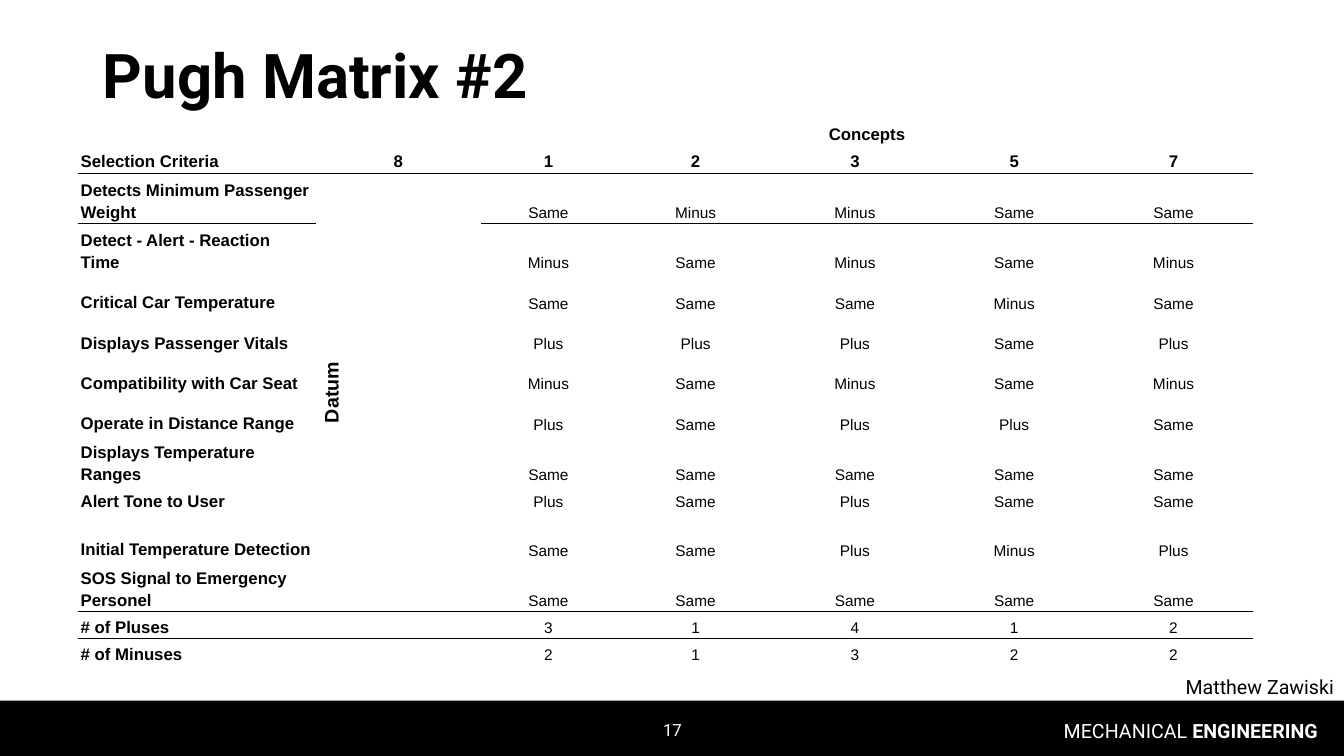
from dataclasses import dataclass

from lxml.etree import SubElement
from pptx import Presentation
from pptx.dml.color import RGBColor
from pptx.enum.shapes import MSO_SHAPE
from pptx.enum.text import MSO_ANCHOR, PP_ALIGN
from pptx.oxml import parse_xml
from pptx.oxml.ns import nsdecls, qn
from pptx.util import Inches, Pt

COLORS = {"ink": "000000", "paper": "FFFFFF"}
NO_STYLE = "{2D5ABB26-0587-4C30-8999-92F81FD0307C}"
COL_WIDTHS = [2.36, 1.64, 1.34] + [1.58] * 4
ROW_HEIGHTS = [0.27, 0.26, 0.48, 0.48, 0.4, 0.4, 0.4, 0.4, 0.48, 0.26, 0.48, 0.48, 0.27, 0.27]
RULED_ROWS = (1, 2, 11, 12)
DATUM_ROW, LAST_CRITERION_ROW, DATUM_COL = 2, 11, 1


@dataclass
class Criterion:
    name: str
    ratings: str


@dataclass
class Label:
    words: list[str]
    box: tuple[float, float, float, float]
    size: int
    color: str
    align: PP_ALIGN
    anchor: MSO_ANCHOR = MSO_ANCHOR.TOP
    spacing: float = 1.0


CRITERIA = [
    Criterion("Detects Minimum Passenger Weight", "Same Minus Minus Same Same"),
    Criterion("Detect - Alert - Reaction Time", "Minus Same Minus Same Minus"),
    Criterion("Critical Car Temperature", "Same Same Same Minus Same"),
    Criterion("Displays Passenger Vitals", "Plus Plus Plus Same Plus"),
    Criterion("Compatibility with Car Seat", "Minus Same Minus Same Minus"),
    Criterion("Operate in Distance Range", "Plus Same Plus Plus Same"),
    Criterion("Displays Temperature Ranges", "Same Same Same Same Same"),
    Criterion("Alert Tone to User", "Plus Same Plus Same Same"),
    Criterion("Initial Temperature Detection", "Same Same Plus Minus Plus"),
    Criterion("SOS Signal to Emergency Personel", "Same Same Same Same Same"),
    Criterion("# of Pluses", "3 1 4 1 2"),
    Criterion("# of Minuses", "2 1 3 2 2"),
]
LABELS = [
    Label(["MECHANICAL ", "ENGINEERING"], (10.17, 7.08, 3, 0.4), 14, "paper", PP_ALIGN.RIGHT),
    Label(["17"], (5.17, 7.04, 3, 0.4), 12, "paper", PP_ALIGN.CENTER, MSO_ANCHOR.MIDDLE),
    Label(["Matthew Zawiski"], (9.83, 6.67, 3.5, 0.25), 14, "ink", PP_ALIGN.RIGHT, spacing=0.9),
]


def rgb(name: str) -> RGBColor:
    return RGBColor.from_string(COLORS[name])


def style_run(r, font: str, size: int, color: str, bold: bool) -> None:
    r.font.name = font
    r.font.size = Pt(size)
    r.font.bold = bold
    r.font.color.rgb = rgb(color)


def add_title(s, text: str) -> None:
    sp = s.shapes.title
    sp.left, sp.top, sp.width, sp.height = map(Inches, (0.92, 0.05, 11.5, 1.45))
    tf = sp.text_frame
    tf.text = text
    tf.vertical_anchor = MSO_ANCHOR.MIDDLE
    p = tf.paragraphs[0]
    p.alignment = PP_ALIGN.LEFT
    p.line_spacing = 0.9
    style_run(p.runs[0], "Roboto", 44, "ink", True)


def add_footer_bar(s) -> None:
    sp = s.shapes.add_shape(MSO_SHAPE.RECTANGLE, 0, Inches(6.95), Inches(13.33), Inches(0.55))
    sp.shadow.inherit = False
    sp.fill.solid()
    sp.fill.fore_color.rgb = rgb("ink")
    sp.line.fill.background()


def add_label(s, label: Label) -> None:
    tf = s.shapes.add_textbox(*map(Inches, label.box)).text_frame
    tf.word_wrap = True
    tf.vertical_anchor = label.anchor
    p = tf.paragraphs[0]
    p.alignment = label.align
    p.line_spacing = label.spacing
    for i, word in enumerate(label.words):
        r = p.add_run()
        r.text = word
        style_run(r, "Roboto", label.size, label.color, i > 0)


def add_bottom_rule(cell) -> None:
    cell._tc.get_or_add_tcPr().insert(0, parse_xml(
        f'<a:lnB {nsdecls("a")} w="9525"><a:solidFill>'
        f'<a:srgbClr val="{COLORS["ink"]}"/></a:solidFill></a:lnB>'))


def fill_cell(cell, text: str, size: int, bold: bool, align: PP_ALIGN) -> None:
    cell.fill.background()
    cell.vertical_anchor = MSO_ANCHOR.BOTTOM
    cell.margin_left = cell.margin_right = Inches(0.03)
    cell.margin_top = cell.margin_bottom = Inches(0.02)
    tf = cell.text_frame
    tf.text = text
    p = tf.paragraphs[0]
    p.alignment = align
    p.line_spacing = 1.15
    for r in p.runs:
        style_run(r, "Arial", size, "ink", bold)
    if not text:
        SubElement(p._p, qn("a:endParaRPr"), sz=str(size * 100))


def add_matrix(s) -> None:
    rows = [["", "", "Concepts", "", "", "", ""],
            ["Selection Criteria", "8", "1", "2", "3", "5", "7"]]
    rows += [[c.name, "", *c.ratings.split()] for c in CRITERIA]
    rows[DATUM_ROW][DATUM_COL] = "Datum"
    table = s.shapes.add_table(len(rows), len(COL_WIDTHS), Inches(0.77), Inches(1.18),
                               Inches(sum(COL_WIDTHS)), Inches(sum(ROW_HEIGHTS))).table
    table.first_row = table.horz_banding = False
    table._tbl.tblPr.find(qn("a:tableStyleId")).text = NO_STYLE
    for col, width in zip(table.columns, COL_WIDTHS):
        col.width = Inches(width)
    for i, texts in enumerate(rows):
        table.rows[i].height = Inches(ROW_HEIGHTS[i])
        for j, text in enumerate(texts):
            cell = table.cell(i, j)
            bold = i < 2 or j < 2
            size = 14 if text == "Datum" else 12 if bold else 11
            fill_cell(cell, text, size, bold, PP_ALIGN.CENTER if j else PP_ALIGN.LEFT)
            if i in RULED_ROWS:
                add_bottom_rule(cell)
    table.cell(0, 2).merge(table.cell(0, len(COL_WIDTHS) - 1))
    datum = table.cell(DATUM_ROW, DATUM_COL)
    datum.merge(table.cell(LAST_CRITERION_ROW, DATUM_COL))
    datum.vertical_anchor = MSO_ANCHOR.MIDDLE
    datum._tc.tcPr.set("vert", "vert270")


def main() -> None:
    prs = Presentation()
    prs.slide_width, prs.slide_height = Inches(13.33), Inches(7.5)
    s = prs.slides.add_slide(prs.slide_layouts[5])
    add_footer_bar(s)
    add_title(s, "Pugh Matrix #2")
    for label in LABELS:
        add_label(s, label)
    add_matrix(s)
    prs.save("out.pptx")


if __name__ == "__main__":
    main()
